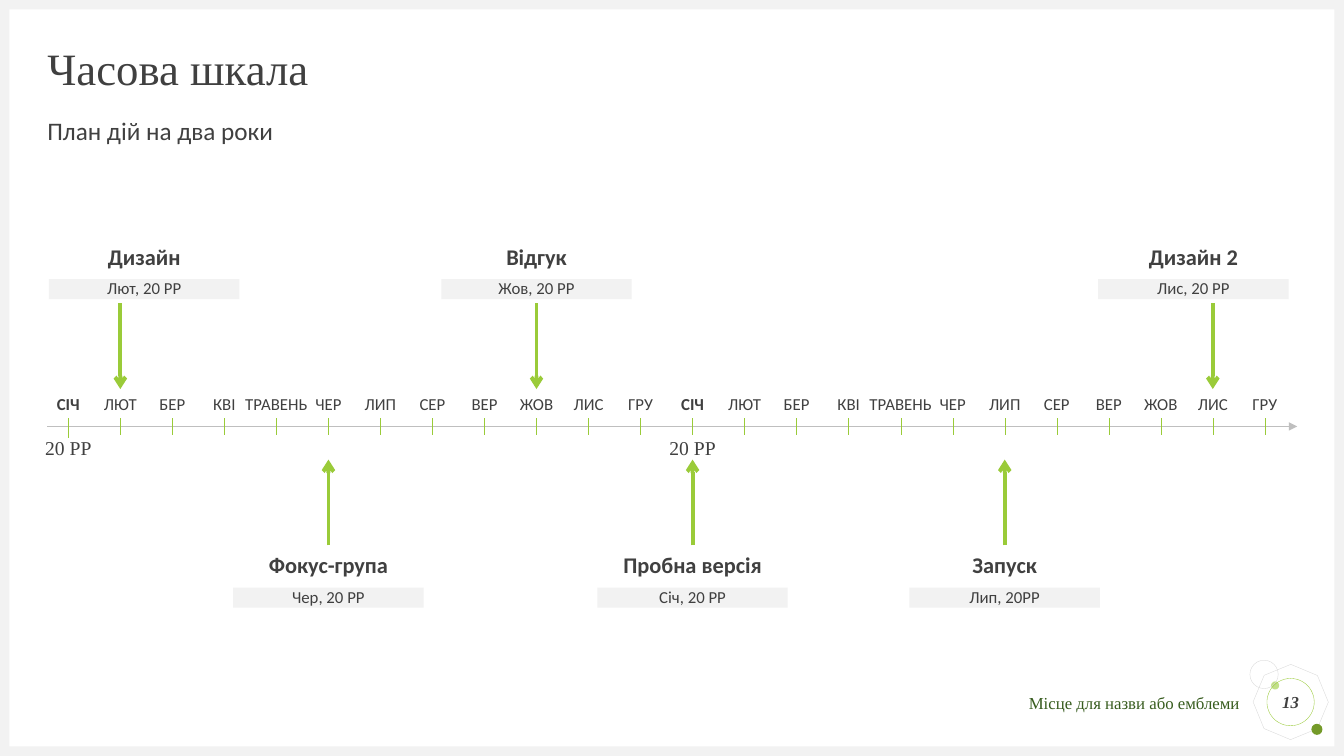
"""Build a two-year timeline slide with monthly ticks and milestone cards."""
from lxml.etree import SubElement
from pptx import Presentation
from pptx.dml.color import RGBColor
from pptx.enum.shapes import MSO_CONNECTOR, MSO_SHAPE
from pptx.enum.text import MSO_ANCHOR, MSO_AUTO_SIZE, PP_ALIGN
from pptx.oxml.ns import qn
from pptx.util import Pt

INK, GREEN, PALE, RULE = "404040", "9ACB39", "F2F2F2", "D9D9D9"
SERIF, SANS = "Times New Roman", "Calibri"
color = RGBColor.from_string


def write(holder, text, size, face=SANS, ink=INK, align=PP_ALIGN.CENTER,
          anchor=MSO_ANCHOR.TOP, inset=0, spacing=0.9, **emphasis):
    frame = holder.text_frame
    frame_format = {"word_wrap": True, "auto_size": MSO_AUTO_SIZE.NONE,
                    "vertical_anchor": anchor, "margin_left": 0,
                    "margin_right": 0, "margin_top": Pt(inset), "margin_bottom": 0}
    paragraph = frame.paragraphs[0]
    run = paragraph.add_run()
    run.text = text
    run.font.color.rgb = color(ink)
    paragraph_format = {"alignment": align, "line_spacing": spacing, "space_before": Pt(0)}
    font_format = {"size": Pt(size), "name": face, **emphasis}
    for target, values in ((frame, frame_format), (paragraph, paragraph_format),
                           (run.font, font_format)):
        for key, value in values.items():
            setattr(target, key, value)


def draw_line(x1, y1, x2, y2, ink, weight, head=None):
    line = slide.shapes.add_connector(MSO_CONNECTOR.STRAIGHT, Pt(x1), Pt(y1), Pt(x2), Pt(y2))
    line.line.color.rgb = color(ink)
    line.line.width = Pt(weight)
    properties = line._element.spPr
    if head:
        SubElement(properties.find(qn("a:ln")), qn("a:tailEnd"), type=head)
    SubElement(properties, qn("a:effectLst"))


deck = Presentation()
deck.slide_width, deck.slide_height = Pt(960), Pt(540)
slide = deck.slides.add_slide(deck.slide_layouts[1])

heading, subtitle = slide.placeholders
for placeholder, top, height in ((heading, 33.8, 33.8), (subtitle, 85, 21.6)):
    position = {"left": Pt(33.8), "top": Pt(top), "width": Pt(892.8), "height": Pt(height)}
    for key, value in position.items():
        setattr(placeholder, key, value)
write(heading, "Часова шкала", 32, SERIF, align=PP_ALIGN.LEFT, anchor=MSO_ANCHOR.MIDDLE)
write(subtitle, "План дій на два роки", 18, align=PP_ALIGN.LEFT)
subtitle_indent = subtitle.text_frame.paragraphs[0]._p.get_or_add_pPr()
subtitle_indent.set("marL", "0")
subtitle_indent.set("indent", "0")
SubElement(subtitle_indent, qn("a:buNone"))

decorations = [
    (MSO_SHAPE.OCTAGON, 897.1, 476.6, 49.7, 49.7, None, RULE, 22.7),
    (MSO_SHAPE.OVAL, 907.9, 486.7, 5.8, 5.8, "C2E088", None, 0),
    (MSO_SHAPE.OVAL, 936.7, 517, 7.9, 7.9, "749A29", None, 0),
    (MSO_SHAPE.OVAL, 892.8, 471.6, 20.2, 20.2, None, RULE, 0),
    (MSO_SHAPE.RECTANGLE, 0, 533.2, 960, 6.8, PALE, None, 0),
    (MSO_SHAPE.RECTANGLE, 0, 0, 960, 6.8, PALE, None, 0),
    (MSO_SHAPE.RECTANGLE, 0, 0, 6.8, 540, PALE, None, 0),
    (MSO_SHAPE.RECTANGLE, 953.2, 0, 6.8, 540, PALE, None, 0),
    (MSO_SHAPE.OVAL, 905, 484.6, 33.8, 33.8, None, GREEN, 0),
]
for preset, left, top, width, height, fill, outline, angle in decorations:
    ornament = slide.shapes.add_shape(preset, Pt(left), Pt(top), Pt(width), Pt(height))
    ornament.shadow.inherit = False
    ornament.rotation = angle
    if fill:
        ornament.fill.solid()
        ornament.fill.fore_color.rgb = color(fill)
        ornament.line.fill.background()
    else:
        ornament.fill.background()
        ornament.line.color.rgb = color(outline)
        ornament.line.width = Pt(0.25)
page_badge = ornament
write(page_badge, "13", 12, SERIF, anchor=MSO_ANCHOR.MIDDLE, spacing=1, bold=True, italic=True)

draw_line(33.8, 304.6, 926.6, 304.6, "BFBFBF", 0.5, "triangle")
JANUARY, MONTH_STEP = 48.8, 37.16
months = ["СІЧ", "ЛЮТ", "БЕР", "КВІ", "ТРАВЕНЬ", "ЧЕР",
          "ЛИП", "СЕР", "ВЕР", "ЖОВ", "ЛИС", "ГРУ"]
for index, month in enumerate(months * 2):
    center = JANUARY + index * MONTH_STEP
    starts_year = month == months[0]
    width = 45.4 if month == "ТРАВЕНЬ" else 29.5
    month_label = slide.shapes.add_textbox(Pt(center - width / 2), Pt(283), Pt(width), Pt(15.8))
    write(month_label, month, 12, bold=starts_year)
    draw_line(center, 298.8, center, 313.2 if index == 0 else 311, GREEN,
              0.5 if index < 12 else 0.25)
    if starts_year:
        year_label = slide.shapes.add_textbox(Pt(center - 21.6), Pt(313.2), Pt(43.2), Pt(15.8))
        write(year_label, "20 РР", 14, SERIF, anchor=MSO_ANCHOR.MIDDLE)

milestones = [
    (1, "Дизайн", "Лют, 20 РР", True),
    (5, "Фокус-група", "Чер, 20 РР", False),
    (9, "Відгук", "Жов, 20 РР", True),
    (12, "Пробна версія", "Січ, 20 РР", False),
    (18, "Запуск", "Лип, 20РР", False),
    (22, "Дизайн 2", "Лис, 20 РР", True),
]
for index, name, date, above in milestones:
    center = JANUARY + index * MONTH_STEP
    card_center = min(max(center, 103), 852.5)
    card_top, arrow_start, arrow_end = (172.8, 216.7, 277.9) if above else (393.1, 389.5, 328.3)
    milestone_name = slide.shapes.add_textbox(
        Pt(card_center - 70.6), Pt(card_top), Pt(141.2), Pt(43.9))
    write(milestone_name, name, 16, inset=2.9, bold=True)
    milestone_date = slide.shapes.add_shape(
        MSO_SHAPE.RECTANGLE, Pt(card_center - 68), Pt(card_top + 26.6), Pt(136), Pt(14.4))
    milestone_date.shadow.inherit = False
    milestone_date.fill.solid()
    milestone_date.fill.fore_color.rgb = color(PALE)
    milestone_date.line.fill.background()
    write(milestone_date, date, 12, anchor=MSO_ANCHOR.MIDDLE)
    draw_line(center, arrow_start, center, arrow_end, GREEN, 2.75, "arrow")

footer = slide.shapes.add_textbox(Pt(687.6), Pt(494.6), Pt(198), Pt(14.4))
write(footer, "Місце для назви або емблеми", 12, SERIF, "375C1E", PP_ALIGN.RIGHT, spacing=1)

deck.save("out.pptx")
